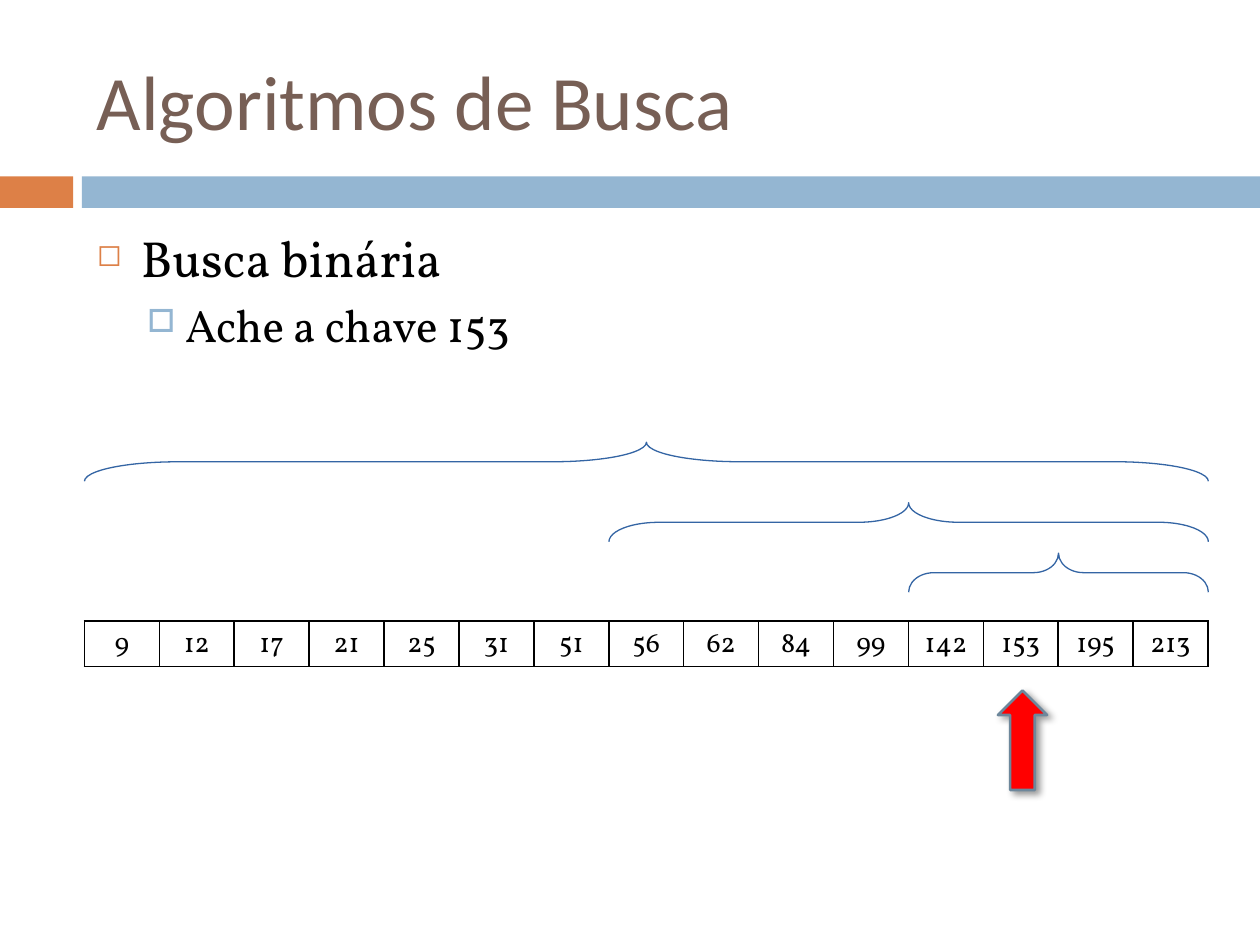
"""Build the binary search slide: title, bullets, number row, range braces and marker."""
from lxml.etree import SubElement
from pptx import Presentation
from pptx.dml.color import RGBColor
from pptx.enum.shapes import MSO_SHAPE
from pptx.enum.text import MSO_ANCHOR, PP_ALIGN
from pptx.oxml import parse_xml
from pptx.oxml.ns import nsdecls, qn
from pptx.util import Inches, Pt


def rgb(value):
    return RGBColor.from_string(value)


def add_run(p, text, size, font, color):
    r = p.add_run()
    r.text = text
    r.font.size, r.font.name = Pt(size), font
    r.font.color.rgb = rgb(color)


prs = Presentation()
prs.slide_width, prs.slide_height = Inches(10), Inches(7.5)
s = prs.slides.add_slide(prs.slide_layouts[6])

left, width = 0.67, 8.92
values = [9, 12, 17, 21, 25, 31, 51, 56, 62, 84, 99, 142, 153, 195, 213]
col = width / len(values)

for x, w, color in [(0, 0.58, "DD8047"), (0.65, 9.35, "94B6D2")]:
    sp = s.shapes.add_shape(MSO_SHAPE.RECTANGLE, Inches(x), Inches(1.4), Inches(w), Inches(0.25))
    sp.shadow.inherit = False
    sp.fill.solid()
    sp.fill.fore_color.rgb = rgb(color)
    sp.line.fill.background()

tf = s.shapes.add_textbox(Inches(left), Inches(0.25), Inches(width), Inches(1.08)).text_frame
tf.word_wrap = True
tf.vertical_anchor = MSO_ANCHOR.MIDDLE
add_run(tf.paragraphs[0], "Algoritmos de Busca", 44, "Calibri", "775F55")

tf = s.shapes.add_textbox(Inches(left), Inches(1.75), Inches(width), Inches(5.23)).text_frame
tf.word_wrap = True
bullets = [
    ("Busca binária", 29, 7, 0.35, -0.35, "◻", "DD8047", 60),
    ("Ache a chave 153", 26, 5.5, 0.7, -0.3, "□", "94B6D2", 70),
]
for level, (text, size, before, margin, indent, char, color, percent) in enumerate(bullets):
    p = tf.add_paragraph() if level else tf.paragraphs[0]
    p.level, p.space_before = level, Pt(before)
    pPr = p._p.get_or_add_pPr()
    pPr.set("marL", str(Inches(margin)))
    pPr.set("indent", str(Inches(indent)))
    SubElement(SubElement(pPr, qn("a:buClr")), qn("a:srgbClr"), val=color)
    SubElement(pPr, qn("a:buSzPct"), val=str(percent * 1000))
    SubElement(pPr, qn("a:buChar"), char=char)
    add_run(p, text, size, "Vollkorn", "000000")

table = s.shapes.add_table(1, len(values), Inches(left), Inches(4.93), Inches(width), Inches(0.36)).table
table.first_row = table.horz_banding = False
for i, value in enumerate(values):
    table.columns[i].width = Inches(col)
    cell = table.cell(0, i)
    cell.margin_left = cell.margin_right = Inches(0.09)
    cell.margin_top = cell.margin_bottom = Inches(0.04)
    tcPr = cell._tc.get_or_add_tcPr()
    for side in ("lnL", "lnR", "lnT", "lnB"):
        ln = SubElement(tcPr, qn(f"a:{side}"), w=str(Pt(1)))
        SubElement(SubElement(ln, qn("a:solidFill")), qn("a:srgbClr"), val="000000")
    cell.fill.background()
    p = cell.text_frame.paragraphs[0]
    p.alignment = PP_ALIGN.CENTER
    add_run(p, str(value), 16, "Vollkorn", "000000")

depth = 0.31
for first, top in [(0, 3.51), (7, 3.99), (11, 4.39)]:
    length = (len(values) - first) * col
    center = left + first * col + length / 2
    sp = s.shapes.add_shape(MSO_SHAPE.LEFT_BRACE, Inches(center - depth / 2),
                            Inches(top + depth / 2 - length / 2), Inches(depth), Inches(length))
    sp.rotation = 90
    sp.adjustments[0] = length / depth / 12
    sp.shadow.inherit = False
    sp.fill.background()
    sp.line.color.rgb = rgb("3465A4")
    sp.line.width = Pt(0)

sp = s.shapes.add_shape(MSO_SHAPE.UP_ARROW, Inches(7.92), Inches(5.48), Inches(0.39), Inches(0.79))
sp.fill.solid()
sp.fill.fore_color.rgb = rgb("FF0000")
sp.line.color.rgb = rgb("6D879B")
sp.line.width = Pt(1.5)
sp._element.spPr.append(parse_xml(
    f'<a:effectLst {nsdecls("a")}><a:outerShdw blurRad="{Pt(4)}" dist="{Pt(3)}" dir="2700000">'
    '<a:srgbClr val="000000"><a:alpha val="40000"/></a:srgbClr></a:outerShdw></a:effectLst>'))

prs.save("out.pptx")
